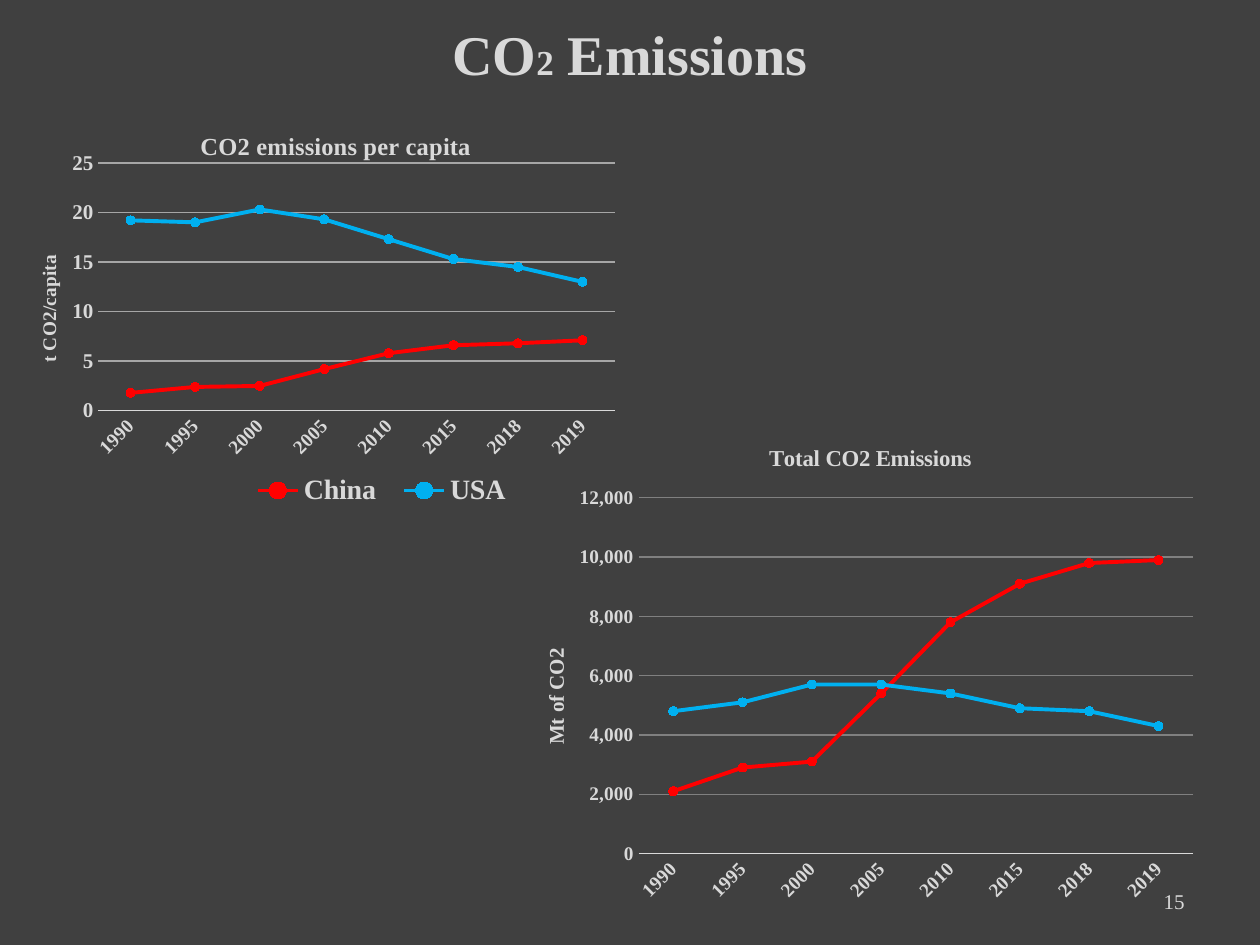
from lxml import etree
from pptx import Presentation
from pptx.chart.data import CategoryChartData
from pptx.dml.color import RGBColor
from pptx.enum.chart import XL_CHART_TYPE as ChartType, XL_LEGEND_POSITION as LegendPosition
from pptx.enum.chart import XL_MARKER_STYLE as MarkerStyle, XL_TICK_MARK as TickMark
from pptx.enum.text import MSO_ANCHOR as Anchor, PP_ALIGN as Align
from pptx.oxml.ns import qn
from pptx.util import Inches, Pt

DARK = RGBColor(0x40, 0x40, 0x40)
LIGHT = RGBColor(0xD9, 0xD9, 0xD9)
RED = RGBColor(0xFF, 0x00, 0x00)
BLUE = RGBColor(0x00, 0xB0, 0xF0)
GRAY = RGBColor(0x80, 0x80, 0x80)
PALE_GRAY = RGBColor(0xA6, 0xA6, 0xA6)
YEARS = ["1990", "1995", "2000", "2005", "2010", "2015", "2018", "2019"]


def style_font(font, size, bold=True):
    font.name = "Times New Roman"
    font.size = Pt(size)
    font.bold = bold
    font.color.rgb = LIGHT


def set_layout(element, inner=False, **fractions):
    """Place a chart part by fractions of the chart's width and height."""
    for old in element.findall(qn("c:layout")):
        element.remove(old)
    before = [qn("c:tx"), qn("c:legendPos"), qn("c:legendEntry")]
    layout = etree.Element(qn("c:layout"))
    element.insert(sum(child.tag in before for child in element), layout)
    manual = etree.SubElement(layout, qn("c:manualLayout"))
    settings = [("layoutTarget", "inner")] if inner else []
    settings += [("xMode", "edge"), ("yMode", "edge")]
    settings += [(name, str(value)) for name, value in fractions.items()]
    for name, value in settings:
        etree.SubElement(manual, qn("c:" + name)).set("val", value)


presentation = Presentation()
presentation.slide_width = Inches(10)
presentation.slide_height = Inches(7.5)
slide = presentation.slides.add_slide(presentation.slide_layouts[6])
slide.background.fill.solid()
slide.background.fill.fore_color.rgb = DARK

# Title and page number
texts = [
    ((0.5, 0.03, 9, 0.78), Align.CENTER, True, [("CO", 32), ("2", 20), (" Emissions", 32)]),
    ((7.17, 6.95, 2.33, 0.4), Align.RIGHT, False, [("15", 12)]),
]
for box, alignment, bold, runs in texts:
    frame = slide.shapes.add_textbox(*map(Inches, box)).text_frame
    frame.word_wrap = True
    frame.vertical_anchor = Anchor.MIDDLE
    paragraph = frame.paragraphs[0]
    paragraph.alignment = alignment
    for text, size in runs:
        run = paragraph.add_run()
        run.text = text
        style_font(run.font, size, bold)

# Line charts: title and axis title are (text, size, x, y)
charts = [
    dict(
        box=(4.17, 3.25, 5.51, 4.08), plot=(0.163, 0.172, 0.799, 0.692),
        title=("Total CO2 Emissions", 13, 0.345, 0.06),
        axis_title=("Mt of CO2", 12, 0.02, 0.457),
        top=12000, step=2000, value_size=11, number_format="#,##0", grid=GRAY, legend=False,
        series=[
            ("Series 1", RED, [2100, 2900, 3100, 5400, 7800, 9100, 9800, 9900]),
            ("Series 2", BLUE, [4800, 5100, 5700, 5700, 5400, 4900, 4800, 4300]),
        ],
    ),
    dict(
        box=(0, 0.83, 5.27, 3.33), plot=(0.148, 0.139, 0.778, 0.591),
        title=("CO2 emissions per capita", 14, 0.295, 0.05),
        axis_title=("t CO2/capita", 11, 0.05, 0.35),
        top=25, step=5, value_size=12, number_format="General", grid=PALE_GRAY, legend=True,
        series=[
            ("China", RED, [1.8, 2.4, 2.5, 4.2, 5.8, 6.6, 6.8, 7.1]),
            ("USA", BLUE, [19.2, 19, 20.3, 19.3, 17.3, 15.3, 14.5, 13]),
        ],
    ),
]
for item in charts:
    data = CategoryChartData()
    data.categories = YEARS
    for name, _, values in item["series"]:
        data.add_series(name, values)
    chart = slide.shapes.add_chart(
        ChartType.LINE_MARKERS, *map(Inches, item["box"]), data).chart
    style_font(chart.font, 11)
    plot = chart.plots[0]
    plot.vary_by_categories = False
    set_layout(chart._chartSpace.chart.plotArea, True, **dict(zip("xywh", item["plot"])))

    # Series
    for series, (_, color, _) in zip(plot.series, item["series"]):
        series.smooth = False
        series.format.line.color.rgb = color
        series.format.line.width = Pt(2.25)
        marker = series.marker
        marker.style = MarkerStyle.CIRCLE
        marker.size = 5
        marker.format.fill.solid()
        marker.format.fill.fore_color.rgb = color
        marker.format.line.color.rgb = color

    # Axes
    years, amounts = chart.category_axis, chart.value_axis
    for axis, size in [(years, 11), (amounts, item["value_size"])]:
        axis.major_tick_mark = axis.minor_tick_mark = TickMark.NONE
        style_font(axis.tick_labels.font, size)
    years.format.line.color.rgb = LIGHT
    years.format.line.width = Pt(0.75)
    years._element.find(qn("c:txPr")).find(qn("a:bodyPr")).set("rot", "-2700000")
    amounts.format.line.fill.background()
    amounts.minimum_scale = 0
    amounts.maximum_scale = item["top"]
    amounts.major_unit = item["step"]
    amounts.tick_labels.number_format = item["number_format"]
    amounts.tick_labels.number_format_is_linked = False
    amounts.major_gridlines.format.line.color.rgb = item["grid"]
    amounts.major_gridlines.format.line.width = Pt(0.75)

    # Titles
    chart.has_title = True
    for title, (text, size, x, y) in [
        (chart.chart_title, item["title"]),
        (amounts.axis_title, item["axis_title"]),
    ]:
        title.text_frame.text = text
        style_font(title.text_frame.paragraphs[0].font, size)
        set_layout(title._element, x=x, y=y)
    body = amounts.axis_title.text_frame._txBody.find(qn("a:bodyPr"))
    body.set("rot", "-5400000")
    body.set("vert", "horz")

    # Legend
    chart.has_legend = item["legend"]
    if item["legend"]:
        chart.legend.position = LegendPosition.RIGHT
        chart.legend.include_in_layout = False
        style_font(chart.legend.font, 16)
        set_layout(chart.legend._element, x=0.36, y=0.87, w=0.43, h=0.1)

presentation.save("out.pptx")
